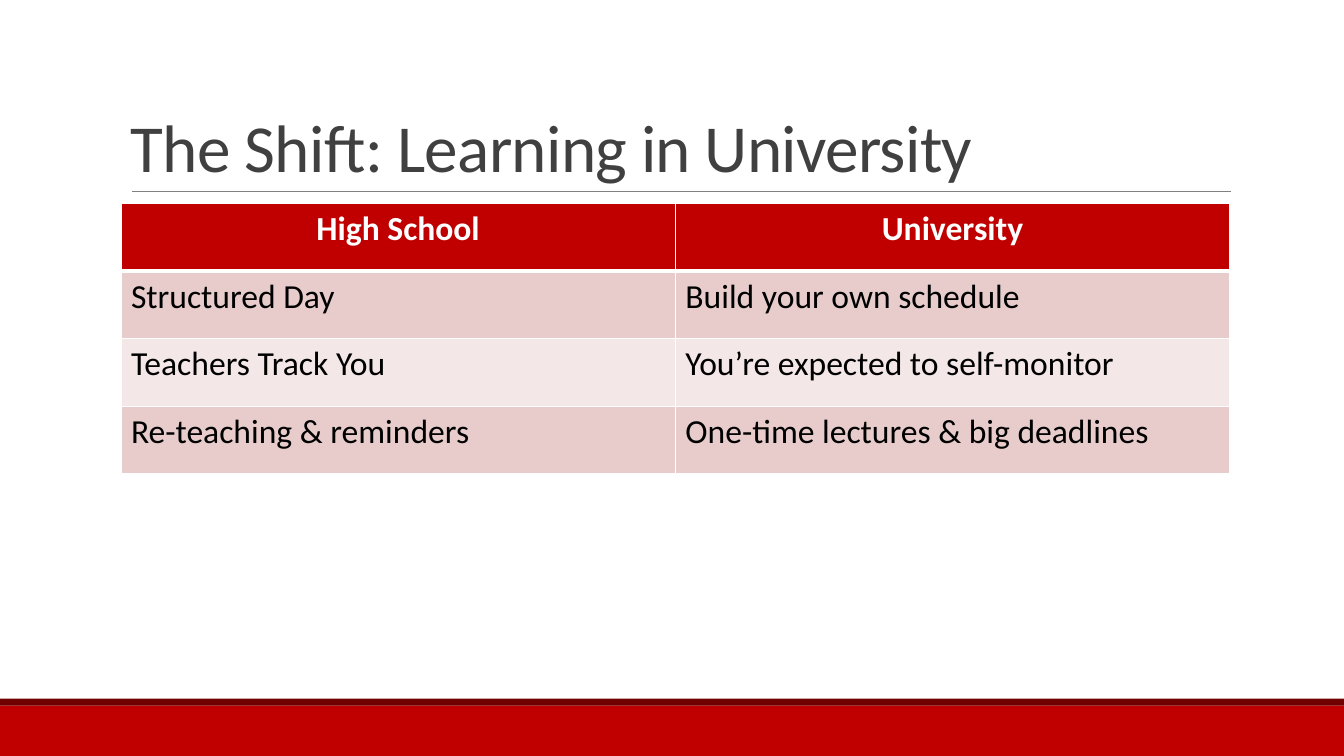
"""Build the slide comparing learning in high school and university."""
from lxml import etree
from pptx import Presentation
from pptx.dml.color import RGBColor
from pptx.enum.shapes import MSO_CONNECTOR, MSO_SHAPE
from pptx.enum.text import MSO_ANCHOR, PP_ALIGN
from pptx.oxml import parse_xml
from pptx.oxml.ns import nsdecls, qn
from pptx.util import Pt

RECT = MSO_SHAPE.RECTANGLE
STRAIGHT = MSO_CONNECTOR.STRAIGHT
BOTTOM = MSO_ANCHOR.BOTTOM
CENTER, LEFT = PP_ALIGN.CENTER, PP_ALIGN.LEFT
RED, DARK_RED, WHITE = "C00000", "700000", "FFFFFF"
BANDS = ["F4E7E7", "E8CCCC"]
ROWS = [
    ("High School", "University"),
    ("Structured Day", "Build your own schedule"),
    ("Teachers Track You", "You’re expected to self-monitor"),
    ("Re-teaching & reminders", "One-time lectures & big deadlines"),
]


def rgb(value):
    return RGBColor.from_string(value)


def add_run(p, text, size, color, bold=False):
    r = p.add_run()
    r.text = text
    r.font.name = "Calibri"
    r.font.size = Pt(size)
    r.font.bold = bold
    r.font.color.rgb = rgb(color)
    return r


prs = Presentation()
prs.slide_width, prs.slide_height = Pt(960), Pt(540)
s = prs.slides.add_slide(prs.slide_layouts[6])

for top, height, color in [(504, 36, RED), (499, 5, DARK_RED)]:
    sp = s.shapes.add_shape(RECT, 0, Pt(top), Pt(960), Pt(height))
    sp.shadow.inherit = False
    sp.fill.solid()
    sp.fill.fore_color.rgb = rgb(color)
    sp.line.fill.background()

rule = s.shapes.add_connector(STRAIGHT, Pt(94), Pt(136.8), Pt(879), Pt(136.8))
rule.line.color.rgb = rgb("808080")
rule.line.width = Pt(0.5)
etree.SubElement(rule._element.spPr, qn("a:effectLst"))

title = s.shapes.add_textbox(Pt(86.4), Pt(22.5), Pt(792), Pt(114.3))
tf = title.text_frame
tf.word_wrap = True
tf.vertical_anchor = BOTTOM
p = tf.paragraphs[0]
p.line_spacing = 0.85
r = add_run(p, "The Shift: Learning in University", 48, "404040")
r.font._element.set("spc", "-50")

frame = s.shapes.add_table(4, 2, Pt(86.4), Pt(145.5), Pt(792), Pt(192.8))
table = frame.table
for row in table.rows:
    row.height = Pt(48.2)
for i, texts in enumerate(ROWS):
    header = i == 0
    for j, text in enumerate(texts):
        cell = table.cell(i, j)
        cell.fill.solid()
        cell.fill.fore_color.rgb = rgb(RED if header else BANDS[i % 2])
        p = cell.text_frame.paragraphs[0]
        p.alignment = CENTER if header else LEFT
        add_run(p, text, 24, WHITE if header else "000000", header)
        tcPr = cell._tc.get_or_add_tcPr()
        for k, side in enumerate("LRTB"):
            thick = (header and side == "B") or (i == 1 and side == "T")
            tcPr.insert(k, parse_xml(
                f'<a:ln{side} {nsdecls("a")} w="{Pt(3 if thick else 1)}">'
                f'<a:solidFill><a:srgbClr val="{WHITE}"/></a:solidFill></a:ln{side}>'))

prs.save("out.pptx")
